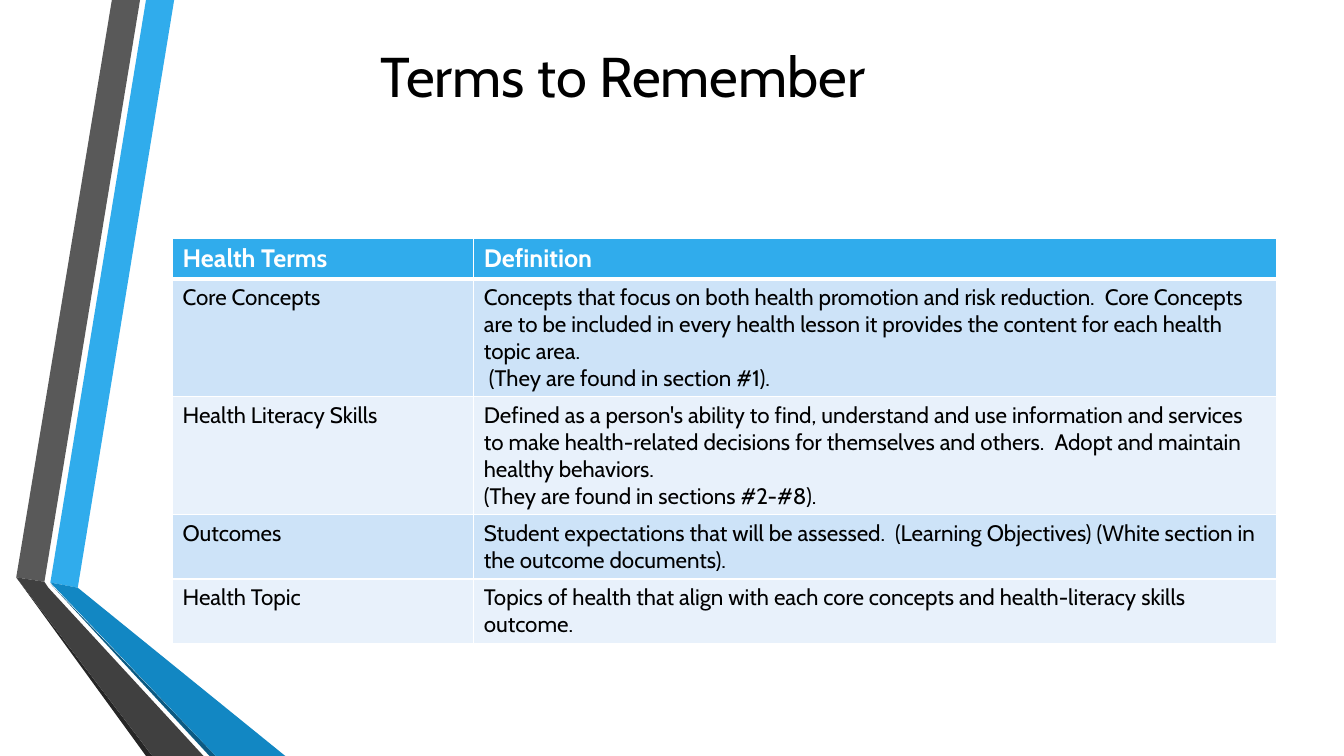
from lxml import etree
from pptx import Presentation
from pptx.dml.color import RGBColor
from pptx.enum.text import MSO_ANCHOR, PP_ALIGN
from pptx.oxml.ns import qn
from pptx.util import Cm, Pt

CENTER = PP_ALIGN.CENTER
MIDDLE = MSO_ANCHOR.MIDDLE
FONT = "Cabin"
COLORS = {
    "white": "FFFFFF", "black": "000000",
    "blue": "30ACEC", "mid_blue": "1287C3", "deep_blue": "0C5A82",
    "grey": "595959", "dark_grey": "404040", "deep_grey": "262626",
    "band_dark": "CDE3F8", "band_light": "E8F1FB",
}

# Ribbon outlines in centimetres, back to front
RIBBONS = [
    ("blue", [(1.27, 14.68), (1.96, 14.81), (4.39, 0), (3.68, 0)]),
    ("grey", [(3.53, 0), (2.82, 0), (0.41, 14.55), (1.12, 14.66)]),
    ("deep_grey", [(0.41, 14.55), (3.68, 19.05), (3.84, 19.05)]),
    ("deep_blue", [(1.27, 14.71), (5.28, 19.05), (5.44, 19.05)]),
    ("mid_blue", [(1.27, 14.68), (5.44, 19.05), (7.19, 19.05), (1.96, 14.81)]),
    ("dark_grey", [(0.41, 14.55), (3.84, 19.05), (5.13, 19.05), (1.22, 14.81),
                   (1.12, 14.66)]),
]

# Each row: height in centimetres, term, paragraphs of the definition
TERMS = [
    (1.03, "Health Terms", ["Definition"]),
    (2.97, "Core Concepts", [
        "Concepts that focus on both health promotion and risk reduction.  Core Concepts "
        "are to be included in every health lesson it provides the content for each health "
        "topic area.",
        " (They are found in section #1)."]),
    (2.97, "Health Literacy Skills", [
        "Defined as a person's ability to find, understand and use information and services "
        "to make health-related decisions for themselves and others.  Adopt and maintain "
        "healthy behaviors.",
        "(They are found in sections #2-#8)."]),
    (1.62, "Outcomes", [
        "Student expectations that will be assessed.  (Learning Objectives) (White section in "
        "the outcome documents)."]),
    (1.62, "Health Topic", [
        "Topics of health that align with each core concepts and health-literacy skills "
        "outcome."]),
]
COLUMN_WIDTHS = [7.59, 20.24]


def rgb(name):
    return RGBColor.from_string(COLORS[name])


def style_font(paragraph, size, color, bold=False):
    font = paragraph.font
    font.name, font.size, font.bold = FONT, Pt(size), bold
    font.color.rgb = rgb(color)


def add_ribbon(slide, color, points):
    corners = [(Cm(x), Cm(y)) for x, y in points]
    builder = slide.shapes.build_freeform(*corners[0])
    builder.add_line_segments(corners[1:], close=True)
    shape = builder.convert_to_shape()
    shape.shadow.inherit = False
    shape.fill.solid()
    shape.fill.fore_color.rgb = rgb(color)
    shape.line.fill.background()


def add_title(slide, text):
    box = slide.shapes.add_textbox(Cm(4.37), Cm(0.64), Cm(22.66), Cm(2.51))
    frame = box.text_frame
    frame.word_wrap = True
    frame.vertical_anchor = MIDDLE
    paragraph = frame.paragraphs[0]
    paragraph.text = text
    paragraph.alignment = CENTER
    style_font(paragraph, 40, "black")


def set_borders(cell, widths):
    properties = cell._tc.get_or_add_tcPr()
    for side, width in widths.items():
        line = etree.SubElement(properties, qn(f"a:ln{side}"), w=str(Pt(width)))
        fill = etree.SubElement(line, qn("a:solidFill"))
        etree.SubElement(fill, qn("a:srgbClr"), val=COLORS["white"])


def fill_cell(cell, paragraphs, row_index):
    header = row_index == 0
    set_borders(cell, {"L": 1, "R": 1, "T": 3 if row_index == 1 else 1,
                       "B": 3 if header else 1})
    band = "band_dark" if row_index % 2 else "band_light"
    cell.fill.solid()
    cell.fill.fore_color.rgb = rgb("blue" if header else band)
    cell.text = "\n".join(paragraphs)
    for paragraph in cell.text_frame.paragraphs:
        style_font(paragraph, 18 if header else 16, "white" if header else "black", header)


def add_terms_table(slide):
    height = sum(row[0] for row in TERMS)
    frame = slide.shapes.add_table(len(TERMS), len(COLUMN_WIDTHS), Cm(4.35), Cm(6),
                                   Cm(sum(COLUMN_WIDTHS)), Cm(height))
    table = frame.table
    for column, width in zip(table.columns, COLUMN_WIDTHS):
        column.width = Cm(width)
    for index, (row_height, term, definition) in enumerate(TERMS):
        table.rows[index].height = Cm(row_height)
        fill_cell(table.cell(index, 0), [term], index)
        fill_cell(table.cell(index, 1), definition, index)


def main():
    presentation = Presentation()
    presentation.slide_width, presentation.slide_height = Cm(33.87), Cm(19.05)
    slide = presentation.slides.add_slide(presentation.slide_layouts[6])

    # Folded ribbons on the left
    for color, points in RIBBONS:
        add_ribbon(slide, color, points)

    # Title and glossary
    add_title(slide, "Terms to Remember")
    add_terms_table(slide)

    presentation.save("out.pptx")


if __name__ == "__main__":
    main()
